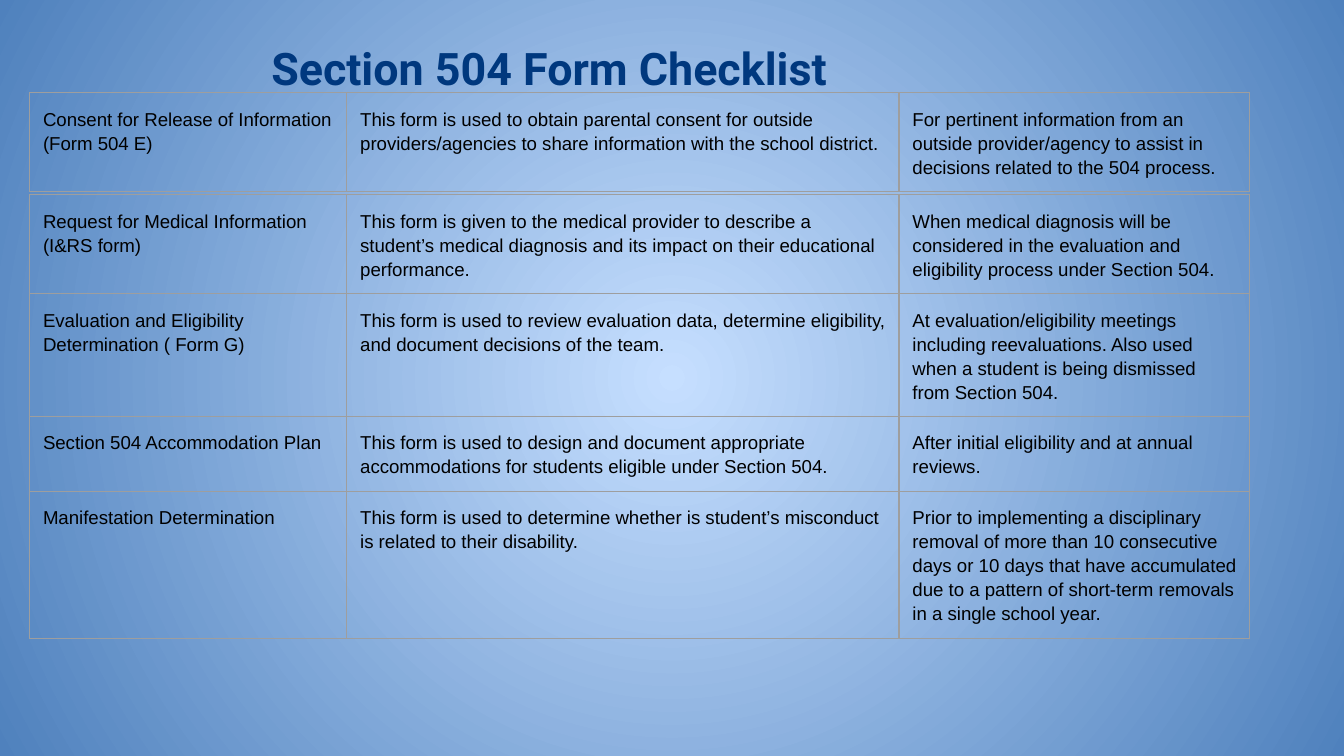
import lxml.etree
import pptx
import pptx.dml.color
import pptx.enum.text
import pptx.oxml.ns
import pptx.util

Inches = pptx.util.Inches
qn = pptx.oxml.ns.qn


def color(hex_string):
    return pptx.dml.color.RGBColor.from_string(hex_string)


def write(frame, text, font="Arial", size=10, hex_color="000000", bold=False, spacing=1.0):
    frame.word_wrap = True
    para = frame.paragraphs[0]
    para.line_spacing = spacing
    span = para.add_run()
    span.text = text
    span.font.name = font
    span.font.size = pptx.util.Pt(size)
    span.font.bold = bold
    span.font.color.rgb = color(hex_color)


deck = pptx.Presentation()
deck.slide_width = Inches(10)
deck.slide_height = Inches(10) * 9 // 16
page = deck.slides.add_slide(deck.slide_layouts[6])

# Radial background, light in the centre
background = page.background.fill
background.gradient()
for stop, hex_color in zip(background.gradient_stops, ["C6DFFF", "4F81BD"]):
    stop.color.rgb = color(hex_color)
gradient = page.element.find(".//" + qn("a:gradFill"))
gradient.remove(gradient.find(qn("a:lin")))
circle = lxml.etree.SubElement(gradient, qn("a:path"), {"path": "circle"})
lxml.etree.SubElement(
    circle, qn("a:fillToRect"), {side: "50000" for side in "ltrb"})

# Each table: top edge, then rows of (height, form, purpose, time of use)
column_widths = [2.36, 0.57, 3.54, 2.61]
text_columns = [0, 1, 3]  # the purpose spans columns 1 and 2
tables = [
    (1.45, [
        (0.73, "Request for Medical Information (I&RS form)",
         "This form is given to the medical provider to describe a student’s medical "
         "diagnosis and its impact on their educational performance.",
         "When medical diagnosis will be considered in the evaluation and eligibility "
         "process under Section 504."),
        (0.91, "Evaluation and Eligibility Determination ( Form G)",
         "This form is used to review evaluation data, determine eligibility, and "
         "document decisions of the team.",
         "At evaluation/eligibility meetings including reevaluations. Also used when a "
         "student is being dismissed from Section 504."),
        (0.55, "Section 504 Accommodation Plan",
         "This form is used to design and document appropriate accommodations for "
         "students eligible under Section 504.",
         "After initial eligibility and at annual reviews."),
        (1.09, "Manifestation Determination",
         "This form is used to determine whether is student’s misconduct is related to "
         "their disability.",
         "Prior to implementing a disciplinary removal of more than 10 consecutive days "
         "or 10 days that have accumulated due to a pattern of short-term removals in a "
         "single school year."),
    ]),
    (0.69, [
        (0.73, "Consent for Release of Information (Form 504 E)",
         "This form is used to obtain parental consent for outside providers/agencies "
         "to share information with the school district.",
         "For pertinent information from an outside provider/agency to assist in "
         "decisions related to the 504 process."),
    ]),
]

for top, rows in tables:
    table = page.shapes.add_table(
        len(rows), len(column_widths), Inches(0.22), Inches(top),
        Inches(sum(column_widths)), Inches(sum(row[0] for row in rows))).table
    table.first_row = False
    table.horz_banding = False
    for column, width in zip(table.columns, column_widths):
        column.width = Inches(width)
    for index, (height, *texts) in enumerate(rows):
        table.rows[index].height = Inches(height)
        table.cell(index, 1).merge(table.cell(index, 2))
        for column_index, text in zip(text_columns, texts):
            cell = table.cell(index, column_index)
            cell.margin_left = cell.margin_right = Inches(0.1)
            cell.margin_top = cell.margin_bottom = Inches(0.1)
            write(cell.text_frame, text, spacing=1.15)
        for cell in table.rows[index].cells:
            properties = cell._tc.get_or_add_tcPr()
            for edge in ["a:lnL", "a:lnR", "a:lnT", "a:lnB"]:
                border = lxml.etree.SubElement(
                    properties, qn(edge), {"w": str(pptx.util.Pt(0.75))})
                solid = lxml.etree.SubElement(border, qn("a:solidFill"))
                lxml.etree.SubElement(solid, qn("a:srgbClr"), {"val": "9E9E9E"})
            cell.fill.background()

title = page.shapes.add_textbox(Inches(1.92), Inches(0.15), Inches(4.89), Inches(0.55))
title.text_frame.vertical_anchor = pptx.enum.text.MSO_ANCHOR.BOTTOM
title.text_frame.margin_bottom = 0
write(title.text_frame, "Section 504 Form Checklist", font="Roboto", size=24,
      hex_color="00387E", bold=True)

deck.save("out.pptx")
